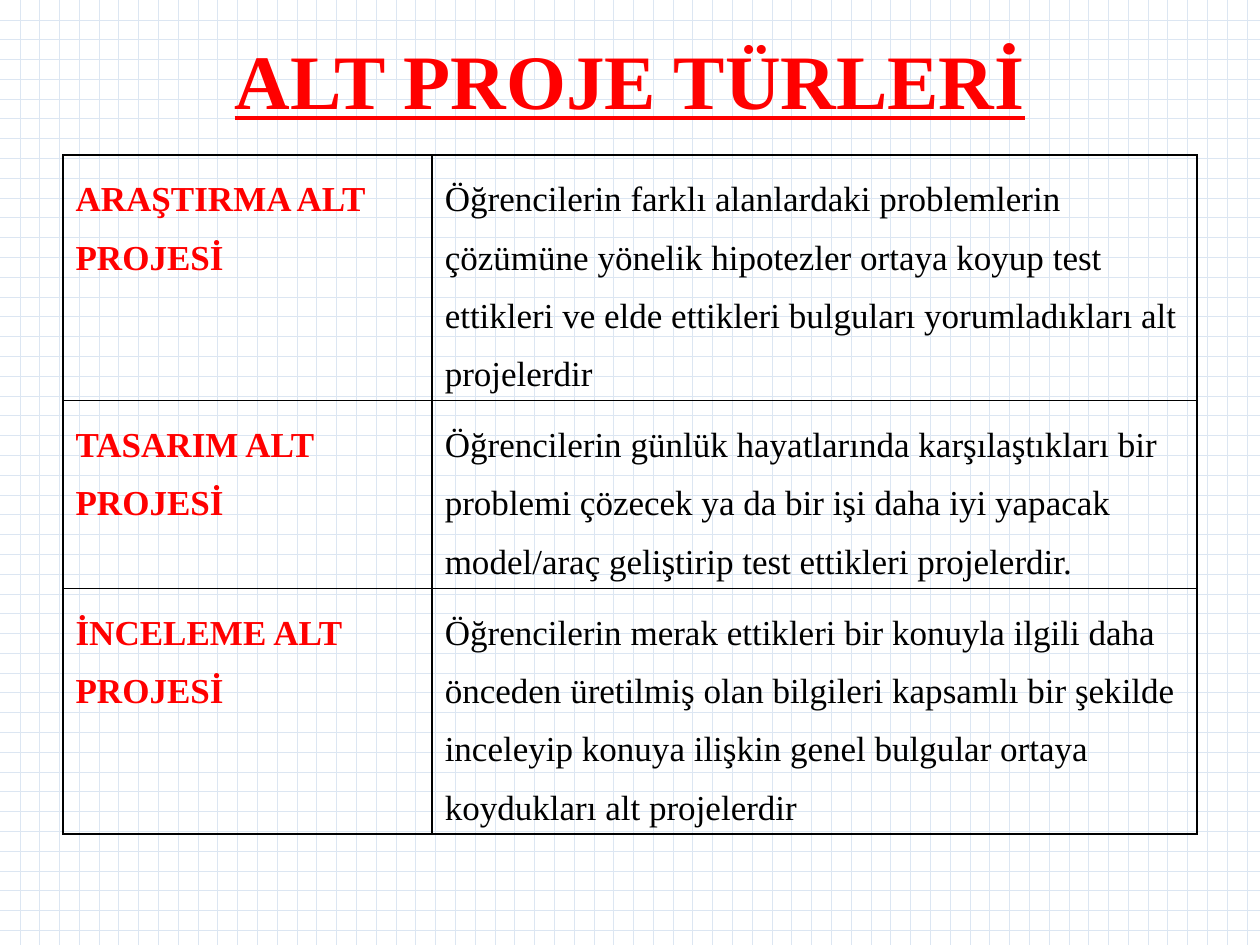
from lxml.etree import SubElement
from pptx import Presentation
from pptx.dml.color import RGBColor
from pptx.enum.dml import MSO_PATTERN
from pptx.enum.text import MSO_ANCHOR, PP_ALIGN
from pptx.oxml.ns import qn
from pptx.util import Inches, Pt

TITLE = "ALT PROJE TÜRLERİ"
PROJECT_TYPES = [
    ("ARAŞTIRMA ALT PROJESİ",
     "Öğrencilerin farklı alanlardaki problemlerin çözümüne yönelik hipotezler "
     "ortaya koyup test ettikleri ve elde ettikleri bulguları yorumladıkları alt "
     "projelerdir"),
    ("TASARIM ALT PROJESİ",
     "Öğrencilerin günlük hayatlarında karşılaştıkları bir problemi çözecek ya da "
     "bir işi daha iyi yapacak model/araç geliştirip test ettikleri projelerdir."),
    ("İNCELEME ALT PROJESİ",
     "Öğrencilerin merak ettikleri bir konuyla ilgili daha önceden üretilmiş olan "
     "bilgileri kapsamlı bir şekilde inceleyip konuya ilişkin genel bulgular ortaya "
     "koydukları alt projelerdir"),
]
COLORS = {"accent": "FF0000", "text": "000000", "border": "000000",
          "grid": "DCE6F2", "paper": "FFFFFF"}
FONT = "Times New Roman"
COL_WIDTHS = [2.93, 6.07]
ROW_HEIGHTS = [1.95, 1.49, 1.95]


def rgb(name):
    return RGBColor.from_string(COLORS[name])


def add_run(p, text, size, color, bold=False, underline=None):
    r = p.add_run()
    r.text = text
    r.font.name = FONT
    r.font.size = Pt(size)
    r.font.bold = bold
    r.font.underline = underline
    r.font.color.rgb = rgb(color)


def add_borders(cell, width=1):
    tc_pr = cell._tc.get_or_add_tcPr()
    for side in ("lnL", "lnR", "lnT", "lnB"):
        ln = SubElement(tc_pr, qn(f"a:{side}"), w=str(Pt(width)))
        fill = SubElement(ln, qn("a:solidFill"))
        SubElement(fill, qn("a:srgbClr"), val=COLORS["border"])


def set_background(s):
    fill = s.background.fill
    fill.patterned()
    fill.pattern = MSO_PATTERN.DOTTED_GRID
    fill.fore_color.rgb = rgb("grid")
    fill.back_color.rgb = rgb("paper")


def add_title(s):
    title = s.shapes.title
    title.left, title.top = Inches(0.5), Inches(0)
    title.width, title.height = Inches(9), Inches(1.25)
    tf = title.text_frame
    tf.vertical_anchor = MSO_ANCHOR.MIDDLE
    p = tf.paragraphs[0]
    p.alignment = PP_ALIGN.CENTER
    add_run(p, TITLE, 44, "accent", bold=True, underline=True)


def add_type_table(s):
    table = s.shapes.add_table(
        len(PROJECT_TYPES), len(COL_WIDTHS), Inches(0.5), Inches(1.23),
        Inches(sum(COL_WIDTHS)), Inches(sum(ROW_HEIGHTS))).table
    table.first_row = table.horz_banding = False
    for column, width in zip(table.columns, COL_WIDTHS):
        column.width = Inches(width)
    for row, height, texts in zip(table.rows, ROW_HEIGHTS, PROJECT_TYPES):
        row.height = Inches(height)
        for i, (cell, text) in enumerate(zip(row.cells, texts)):
            add_borders(cell)
            cell.fill.background()
            p = cell.text_frame.paragraphs[0]
            p.line_spacing = 1.5
            add_run(p, text, 20, "text" if i else "accent", bold=i == 0)


def main():
    prs = Presentation()
    prs.slide_width, prs.slide_height = Inches(10), Inches(7.5)
    s = prs.slides.add_slide(prs.slide_layouts[5])
    set_background(s)
    add_title(s)
    add_type_table(s)
    prs.save("out.pptx")


if __name__ == "__main__":
    main()
